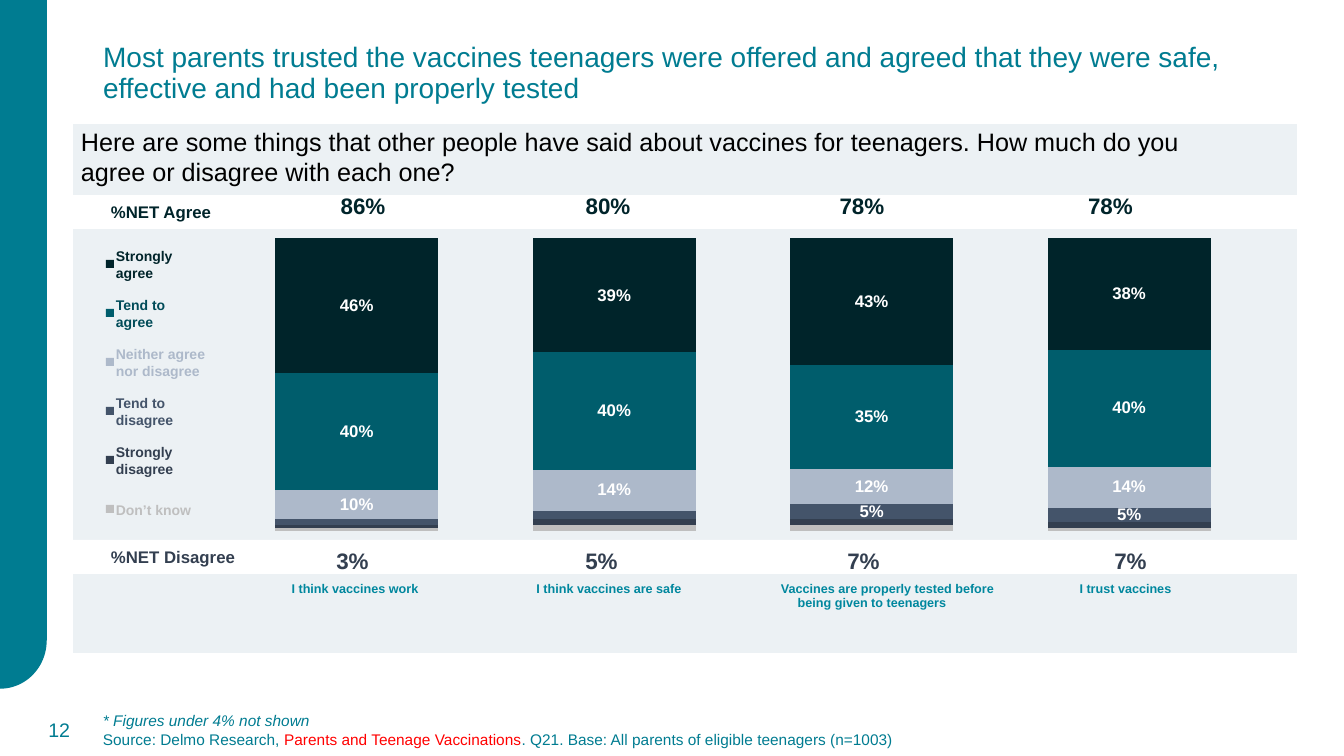
from lxml import etree
from pptx import Presentation
from pptx.chart.data import CategoryChartData
from pptx.dml.color import RGBColor
from pptx.enum.chart import XL_CHART_TYPE, XL_LABEL_POSITION
from pptx.enum.shapes import MSO_SHAPE
from pptx.enum.text import MSO_ANCHOR, MSO_AUTO_SIZE, PP_ALIGN
from pptx.oxml import parse_xml
from pptx.oxml.ns import nsdecls, qn
from pptx.util import Emu, Pt

# Content
FONT = "Arial"
TEAL, DARK, SLATE, WHITE = "007C91", "00242A", "333F50", "FFFFFF"
TITLE = ("Most parents trusted the vaccines teenagers were offered and agreed "
         "that they were safe, effective and had been properly tested")
QUESTION = ("Here are some things that other people have said about vaccines for "
            "teenagers. How much do you agree or disagree with each one?")
FOOTNOTE = [
    [("* Figures under 4% not shown", TEAL, True)],
    [("Source: Delmo Research, ", TEAL, False),
     ("Parents and Teenage Vaccinations", "FF0000", False),
     (". Q21. Base: All parents of eligible teenagers (n=1003)", TEAL, False)],
]
# Legend lines, text colour, bar colour, values
ANSWERS = [
    (["Strongly agree"], DARK, DARK, (0.46, 0.39, 0.43, 0.38)),
    (["Tend to agree"], "004B58", "005D6C", (0.40, 0.40, 0.35, 0.40)),
    (["Neither agree", "nor disagree"], "ADB9CA", "ADB9CA", (0.10, 0.14, 0.12, 0.14)),
    (["Tend to disagree"], "44546A", "44546A", (0.02, 0.03, 0.05, 0.05)),
    (["Strongly disagree"], SLATE, SLATE, (0.01, 0.02, 0.02, 0.02)),
    (["Don’t know"], "BFBFBF", "BFBFBF", (0.01, 0.02, 0.02, 0.01)),
]
LABEL_MINIMUM = 0.04
# Each cell: text, extra left margin, first-line indent
NET_AGREE = [("86%", 25, 0), ("80%", 25, 0), ("78%", 43, 0), ("78%", 50, 0)]
NET_DISAGREE = [("3%", 0, 0), ("5%", 0, 0), ("7%", 0, 0), ("7%", 37, 0)]
STATEMENTS = [
    ("I think vaccines work", 0, 0),
    ("I think vaccines are safe", 0, 0),
    ("Vaccines are properly tested before being given to teenagers", 0, 31),
    ("I trust vaccines", 0, 0),
]
NO_STYLE = "{2D5ABB26-0587-4C30-8999-92F81FD0307C}"
LEGEND_TOP, LEGEND_STEP = 252, 49


def px(value):
    return Emu(round(value * 914400 / 100.8))


def color(value):
    return RGBColor.from_string(value)


def box(values):
    return [px(value) for value in values]


def add_run(paragraph, text, size, shade, bold=False, italic=False):
    run = paragraph.add_run()
    run.text = text
    font = run.font
    font.name, font.size, font.bold, font.italic = FONT, Pt(size), bold, italic
    font.color.rgb = color(shade)


def add_block(shape_kind, place, fill, line=None, width=1):
    shape = slide.shapes.add_shape(shape_kind, *box(place))
    shape.shadow.inherit = False
    shape.fill.solid()
    shape.fill.fore_color.rgb = color(fill)
    if line:
        shape.line.color.rgb = color(line)
        shape.line.width = Pt(width)
    else:
        shape.line.fill.background()
    return shape


def add_text(place, paragraphs, size, bold=False, wrap=True,
             anchor=MSO_ANCHOR.MIDDLE, align=PP_ALIGN.LEFT):
    frame = slide.shapes.add_textbox(*box(place)).text_frame
    frame.word_wrap = wrap
    frame.vertical_anchor = anchor
    for index, runs in enumerate(paragraphs):
        paragraph = frame.add_paragraph() if index else frame.paragraphs[0]
        paragraph.alignment = align
        for text, shade, italic in runs:
            add_run(paragraph, text, size, shade, bold, italic)
    return frame


def add_row(left, top, height, widths, cells, size, shade, margins,
            anchor=MSO_ANCHOR.MIDDLE, align=PP_ALIGN.CENTER):
    frame = slide.shapes.add_table(
        1, len(cells), *box((left, top, sum(widths), height)))
    table = frame.table
    table.first_row = table.horz_banding = False
    frame._element.find(".//" + qn("a:tableStyleId")).text = NO_STYLE
    for index, (text, shift, indent) in enumerate(cells):
        table.columns[index].width = px(widths[index])
        cell = table.cell(0, index)
        cell.fill.background()
        cell.vertical_anchor = anchor
        left_margin, top_margin, right_margin, bottom_margin = margins
        cell.margin_left = px(left_margin + shift)
        cell.margin_top, cell.margin_right = px(top_margin), px(right_margin)
        cell.margin_bottom = px(bottom_margin)
        paragraph = cell.text_frame.paragraphs[0]
        paragraph.alignment = align
        if indent:
            paragraph._p.get_or_add_pPr().set("indent", str(px(indent)))
        add_run(paragraph, text, size, shade, bold=True)


def add_answer_chart(place):
    data = CategoryChartData(number_format="0%")
    data.categories = ["1", "2", "3", "4"]
    for lines, _, _, values in ANSWERS:
        data.add_series(" ".join(lines), values)
    chart = slide.shapes.add_chart(
        XL_CHART_TYPE.COLUMN_STACKED_100, *box(place), data).chart
    chart.has_legend = chart.has_title = False
    chart.font.name, chart.font.size = FONT, Pt(10)
    chart.font.color.rgb = color("000000")
    chart.value_axis.reverse_order = True
    chart.value_axis.has_major_gridlines = False
    chart.value_axis.maximum_scale = 1
    chart.value_axis.visible = chart.category_axis.visible = False
    plot = chart.plots[0]
    plot.gap_width, plot.overlap, plot.vary_by_categories = 58, 100, False

    for series, (_, _, shade, values) in zip(plot.series, ANSWERS):
        series.format.fill.solid()
        series.format.fill.fore_color.rgb = color(shade)
        if max(values) < LABEL_MINIMUM:
            continue
        labels = series.data_labels
        labels.show_value = True
        labels.position = XL_LABEL_POSITION.CENTER
        labels.number_format, labels.number_format_is_linked = "0%", False
        labels.font.name, labels.font.size, labels.font.bold = FONT, Pt(12), True
        labels.font.color.rgb = color(WHITE)
        small = [i for i, value in enumerate(values) if value < LABEL_MINIMUM]
        for position, index in enumerate(small):
            labels._element.insert(position, parse_xml(
                f'<c:dLbl {nsdecls("c")}><c:idx val="{index}"/>'
                '<c:delete val="1"/></c:dLbl>'))

    # Fixed plot area inside the chart frame
    plot_area = chart._chartSpace.find(".//" + qn("c:plotArea"))
    for old_layout in plot_area.findall(qn("c:layout")):
        plot_area.remove(old_layout)
    layout = etree.Element(qn("c:layout"))
    manual = etree.SubElement(layout, qn("c:manualLayout"))
    for tag, value in (("layoutTarget", "inner"), ("xMode", "edge"),
                       ("yMode", "edge"), ("x", "0"), ("y", "0.154"),
                       ("w", "1"), ("h", "0.747")):
        etree.SubElement(manual, qn("c:" + tag)).set("val", value)
    plot_area.insert(0, layout)


presentation = Presentation()
presentation.slide_width, presentation.slide_height = px(1344), px(756)
slide = presentation.slides.add_slide(presentation.slide_layouts[5])

# Side band with its rounded foot, and the grey panel
add_block(MSO_SHAPE.RECTANGLE, (0, 0, 46, 640), TEAL, TEAL)
foot = add_block(MSO_SHAPE.PIE, (-46, 593, 92, 95), TEAL, TEAL)
foot.adjustments[0], foot.adjustments[1] = 108, 162
foot.rotation = 180
add_block(MSO_SHAPE.RECTANGLE, (72, 123, 1226, 531), "ECF1F4", WHITE, 1.5)

# Title
title = slide.shapes.title
title.left, title.top, title.width, title.height = box((93, 1, 1159, 146))
title.text_frame.word_wrap = True
title.text_frame.auto_size = MSO_AUTO_SIZE.NONE
title.text_frame.vertical_anchor = MSO_ANCHOR.MIDDLE
title_paragraph = title.text_frame.paragraphs[0]
title_paragraph.alignment = PP_ALIGN.LEFT
title_paragraph.line_spacing = 0.9
add_run(title_paragraph, TITLE, 20, TEAL)

# Footnote and page number
add_text((93, 710, 1169, 40), FOOTNOTE, 11)
add_text((14, 710, 66, 40), [[("12", TEAL, False)]], 14, align=PP_ALIGN.RIGHT)

# Chart, then the net rows and statements around it
add_answer_chart((228, 178, 1030, 392))
TIGHT, EVEN, NORMAL = (1, 1, 1, 0), (5, 5, 5, 5), (10, 5, 10, 5)
add_row(228, 577, 62, (254, 254, 272, 235), STATEMENTS, 9, "00879E", EVEN,
        anchor=MSO_ANCHOR.TOP)
for label, shade, band_top, row_top, row_height, widths, cells in (
        ("%NET Agree", DARK, 195, 187, 38, (245, 245, 245, 245), NET_AGREE),
        ("%NET Disagree", SLATE, 540, 543, 37, (249, 249, 275, 222), NET_DISAGREE)):
    add_block(MSO_SHAPE.RECTANGLE, (72, band_top, 1226, 34), WHITE)
    add_row(101, band_top - 3, 41, (171,), [(label, 0, 0)], 12, shade, NORMAL,
            align=PP_ALIGN.LEFT)
    add_row(228, row_top, row_height, widths, cells, 16, shade, TIGHT)

# Legend
for index, (lines, text_shade, bar_shade, _) in enumerate(ANSWERS):
    top = LEGEND_TOP + index * LEGEND_STEP
    add_block(MSO_SHAPE.RECTANGLE, (106, top + 8, 8, 8), bar_shade)
    add_text((106, top, 110, 25), [[(line, text_shade, False)] for line in lines],
             10, bold=True, wrap=False)

# Survey question
question = add_text((71, 121, 1170, 72), [[(QUESTION, "000000", False)]], 18,
                    anchor=MSO_ANCHOR.TOP)
question.auto_size = MSO_AUTO_SIZE.SHAPE_TO_FIT_TEXT

presentation.save("out.pptx")
